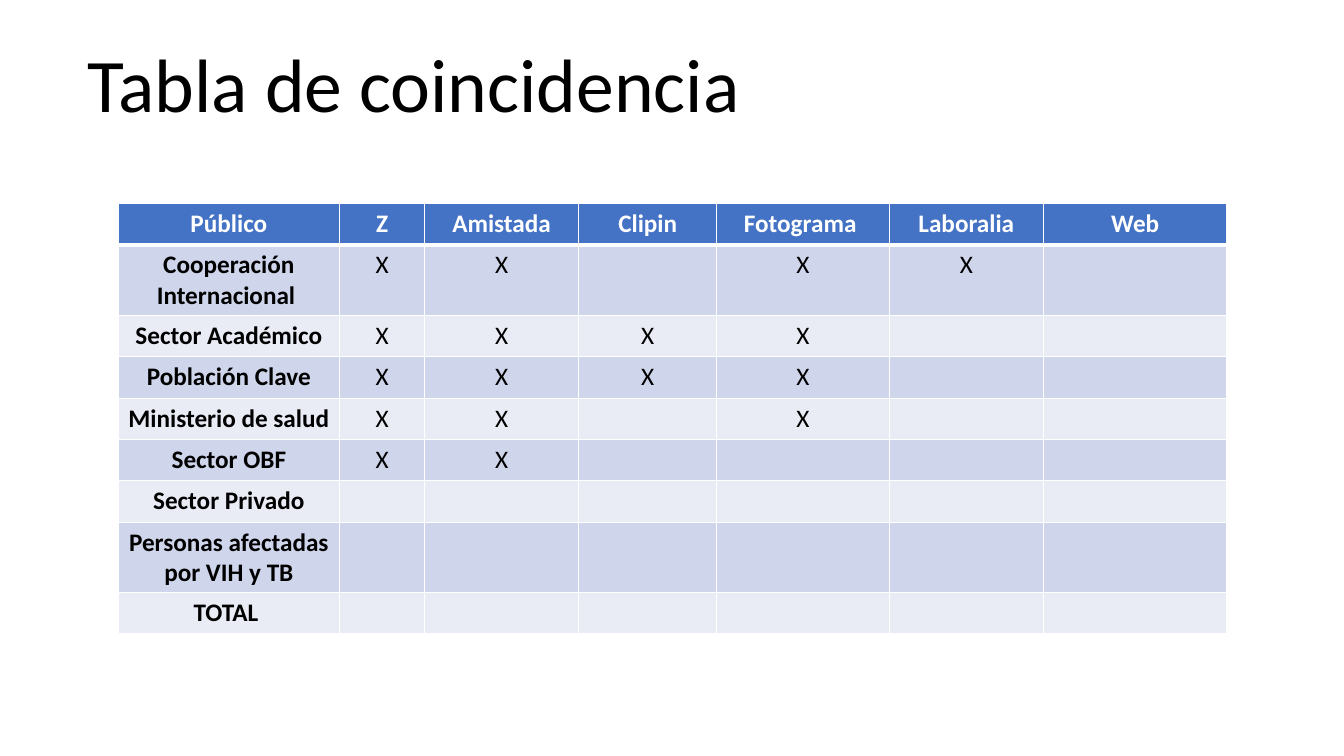
from typing import NamedTuple

from lxml import etree
from pptx import Presentation
from pptx.dml.color import RGBColor
from pptx.enum.text import MSO_ANCHOR, PP_ALIGN
from pptx.oxml.ns import qn
from pptx.util import Inches, Pt

CENTER, BOTTOM = PP_ALIGN.CENTER, MSO_ANCHOR.BOTTOM
FONT = "Calibri"
WHITE, BLACK, BLUE = "FFFFFF", "000000", "4472C4"
BANDS = ("CFD5EA", "E9EBF5")
ROW_HEIGHT = 0.41
THIN, THICK = 1, 3


class Channel(NamedTuple):
    name: str
    width: float


class Audience(NamedTuple):
    name: str
    marks: str  # one character per channel, "-" where there is no match


CHANNELS = [
    Channel("Público", 2.2), Channel("Z", 0.84), Channel("Amistada", 1.53),
    Channel("Clipin", 1.37), Channel("Fotograma ", 1.71),
    Channel("Laboralia", 1.53), Channel("Web", 1.82),
]
AUDIENCES = [
    Audience("Cooperación Internacional ", "XX-XX-"),
    Audience("Sector Académico", "XXXX--"),
    Audience("Población Clave", "XXXX--"),
    Audience("Ministerio de salud", "XX-X--"),
    Audience("Sector OBF", "XX----"),
    Audience("Sector Privado", "------"),
    Audience("Personas afectadas por VIH y TB", "------"),
    Audience("TOTAL ", "------"),
]


def rgb(color: str) -> RGBColor:
    return RGBColor.from_string(color)


def write(frame, text: str, size: float, color: str, bold: bool = False) -> None:
    frame.text = text
    for run in frame.paragraphs[0].runs:
        run.font.name = FONT
        run.font.size = Pt(size)
        run.font.bold = bold
        run.font.color.rgb = rgb(color)


def add_borders(cell, top: float, bottom: float) -> None:
    properties = cell._tc.get_or_add_tcPr()
    for side, width in (("L", THIN), ("R", THIN), ("T", top), ("B", bottom)):
        line = etree.SubElement(properties, qn(f"a:ln{side}"), w=str(Pt(width)))
        fill = etree.SubElement(line, qn("a:solidFill"))
        etree.SubElement(fill, qn("a:srgbClr"), val=WHITE)


def fill_cell(cell, text: str, row: int, bold: bool) -> None:
    is_header = row == 0
    add_borders(cell, THICK if row == 1 else THIN, THICK if is_header else THIN)
    cell.fill.solid()
    cell.fill.fore_color.rgb = rgb(BLUE if is_header else BANDS[(row - 1) % 2])
    write(cell.text_frame, text, 18, WHITE if is_header else BLACK, bold)
    cell.text_frame.paragraphs[0].alignment = CENTER


def add_title(slide, text: str) -> None:
    title = slide.shapes.add_textbox(Inches(0.77), Inches(0.57), Inches(10), Inches(0.76))
    frame = title.text_frame
    frame.word_wrap = True
    frame.vertical_anchor = BOTTOM
    write(frame, text, 54, BLACK)
    frame.paragraphs[0].line_spacing = 0.9


def add_match_table(slide) -> None:
    rows = [[channel.name for channel in CHANNELS]]
    rows += [[audience.name, *audience.marks.replace("-", " ")] for audience in AUDIENCES]
    width = sum(channel.width for channel in CHANNELS)
    table = slide.shapes.add_table(
        len(rows), len(CHANNELS), Inches(1.17), Inches(2.02),
        Inches(width), Inches(ROW_HEIGHT * len(rows))).table
    for column, channel in zip(table.columns, CHANNELS):
        column.width = Inches(channel.width)
    for row, texts in enumerate(rows):
        for column, text in enumerate(texts):
            fill_cell(table.cell(row, column), text.lstrip(), row,
                      bold=row == 0 or column == 0)


def main() -> None:
    presentation = Presentation()
    presentation.slide_width = Inches(13.33)
    presentation.slide_height = Inches(7.5)
    slide = presentation.slides.add_slide(presentation.slide_layouts[6])

    # Heading
    add_title(slide, "Tabla de coincidencia")

    # Audiences against channels
    add_match_table(slide)

    presentation.save("out.pptx")


if __name__ == "__main__":
    main()
